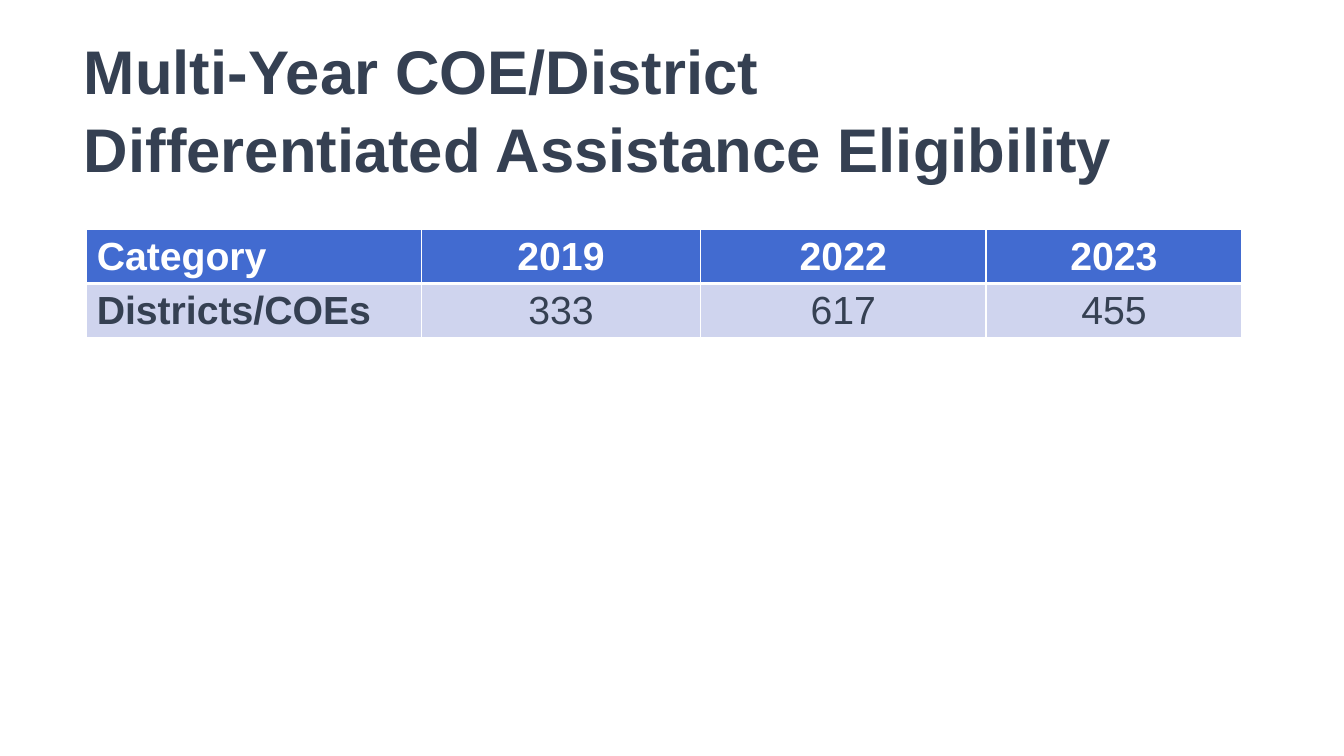
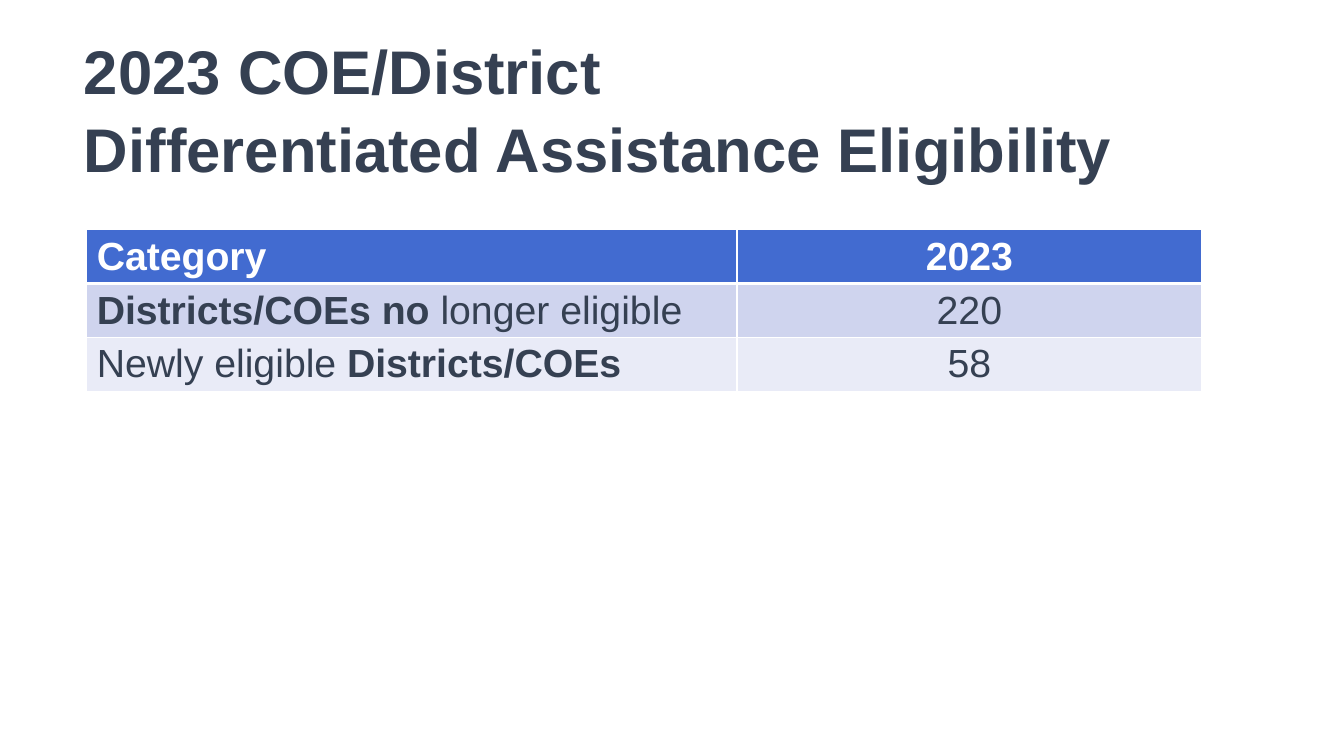
from dataclasses import dataclass

from lxml.etree import SubElement
from pptx import Presentation
from pptx.dml.color import RGBColor
from pptx.enum.text import MSO_ANCHOR, MSO_AUTO_SIZE, PP_ALIGN
from pptx.oxml.ns import qn
from pptx.util import Inches, Pt


@dataclass(frozen=True)
class Theme:
    font: str = "Arial"
    ink: str = "354052"
    white: str = "FFFFFF"
    header: str = "426BD0"
    bands: tuple = ("CFD4EE", "E9EBF7")
    title_size: int = 44
    table_size: int = 28
    thin: int = 1
    thick: int = 3


THEME = Theme()
WIDTH, HEIGHT = Inches(13.33), Inches(7.5)

# Boxes as left, top, width, height in percent of the slide
TITLE_BOX = (5.5, 4.4, 89.1, 19.47)
TABLE_LEFT, TABLE_TOP, ROW_HEIGHT = 6.45, 30.4, 7.07


def across(percent):
    return int(WIDTH * percent / 100)


def down(percent):
    return int(HEIGHT * percent / 100)


def write(p, text, size, color=THEME.ink, bold=False, align=PP_ALIGN.LEFT):
    """Add text to a paragraph; a newline becomes a line break."""
    p.alignment = align
    for i, line in enumerate(text.split("\n")):
        if i:
            p.add_line_break()
        r = p.add_run()
        r.text = line
        r.font.name = THEME.font
        r.font.size = Pt(size)
        r.font.bold = bold
        r.font.color.rgb = RGBColor.from_string(color)


def set_borders(cell, top, bottom):
    """Draw white cell edges with the given top and bottom widths."""
    tcPr = cell._tc.get_or_add_tcPr()
    edges = {"L": THEME.thin, "R": THEME.thin, "T": top, "B": bottom}
    for side, width in edges.items():
        ln = SubElement(tcPr, qn(f"a:ln{side}"), w=str(Pt(width)))
        fill = SubElement(ln, qn("a:solidFill"))
        SubElement(fill, qn("a:srgbClr"), val=THEME.white)


def style_title_layout(layout):
    """Place the title once, for every slide on the layout."""
    title = next(sp for sp in layout.placeholders
                 if sp.placeholder_format.idx == 0)
    left, top, width, height = TITLE_BOX
    title.left, title.top = across(left), down(top)
    title.width, title.height = across(width), down(height)


def add_title(s, text):
    tf = s.shapes.title.text_frame
    tf.word_wrap = True
    tf.auto_size = MSO_AUTO_SIZE.NONE
    tf.vertical_anchor = MSO_ANCHOR.MIDDLE
    p = tf.paragraphs[0]
    p.line_spacing = 1.05
    write(p, text, THEME.title_size, bold=True)


def add_data_table(s, left, top, columns, rows):
    """Each cell is a list of (text, bold) runs; the first row is the header."""
    frame = s.shapes.add_table(len(rows), len(columns), across(left), down(top),
                               across(sum(columns)), down(ROW_HEIGHT * len(rows)))
    table = frame.table
    for column, width in zip(table.columns, columns):
        column.width = across(width)
    for i, row in enumerate(rows):
        header = i == 0
        fill = THEME.header if header else THEME.bands[(i - 1) % 2]
        color = THEME.white if header else THEME.ink
        for j, runs in enumerate(row):
            cell = table.cell(i, j)
            set_borders(cell, THEME.thick if i == 1 else THEME.thin,
                        THEME.thick if header else THEME.thin)
            cell.fill.solid()
            cell.fill.fore_color.rgb = RGBColor.from_string(fill)
            for text, bold in runs:
                write(cell.text_frame.paragraphs[0], text, THEME.table_size,
                      color=color, bold=bold,
                      align=PP_ALIGN.CENTER if j else PP_ALIGN.LEFT)


def add_table_slide(prs, layout, subject, columns, headings, body):
    s = prs.slides.add_slide(layout)
    add_title(s, f"{subject} COE/District\nDifferentiated Assistance Eligibility")
    rows = [[[(heading, True)] for heading in headings]]
    rows += [[label] + [[(str(value), False)] for value in values]
             for label, *values in body]
    add_data_table(s, TABLE_LEFT, TABLE_TOP, columns, rows)


def main():
    prs = Presentation()
    prs.slide_width, prs.slide_height = WIDTH, HEIGHT
    layout = prs.slide_layouts[5]
    style_title_layout(layout)

    # Eligibility by year
    add_table_slide(prs, layout, "Multi-Year", (24.9, 20.78, 21.23, 19.05),
                    ("Category", "2019", "2022", "2023"),
                    [([("Districts/COEs", True)], 333, 617, 455)])

    # Changes in eligibility
    add_table_slide(prs, layout, "2023", (48.39, 34.58), ("Category", "2023"),
                    [([("Districts/COEs no", True), (" longer eligible", False)], 220),
                     ([("Newly eligible ", False), ("Districts/COEs", True)], 58)])
    prs.save("out.pptx")


if __name__ == "__main__":
    main()
